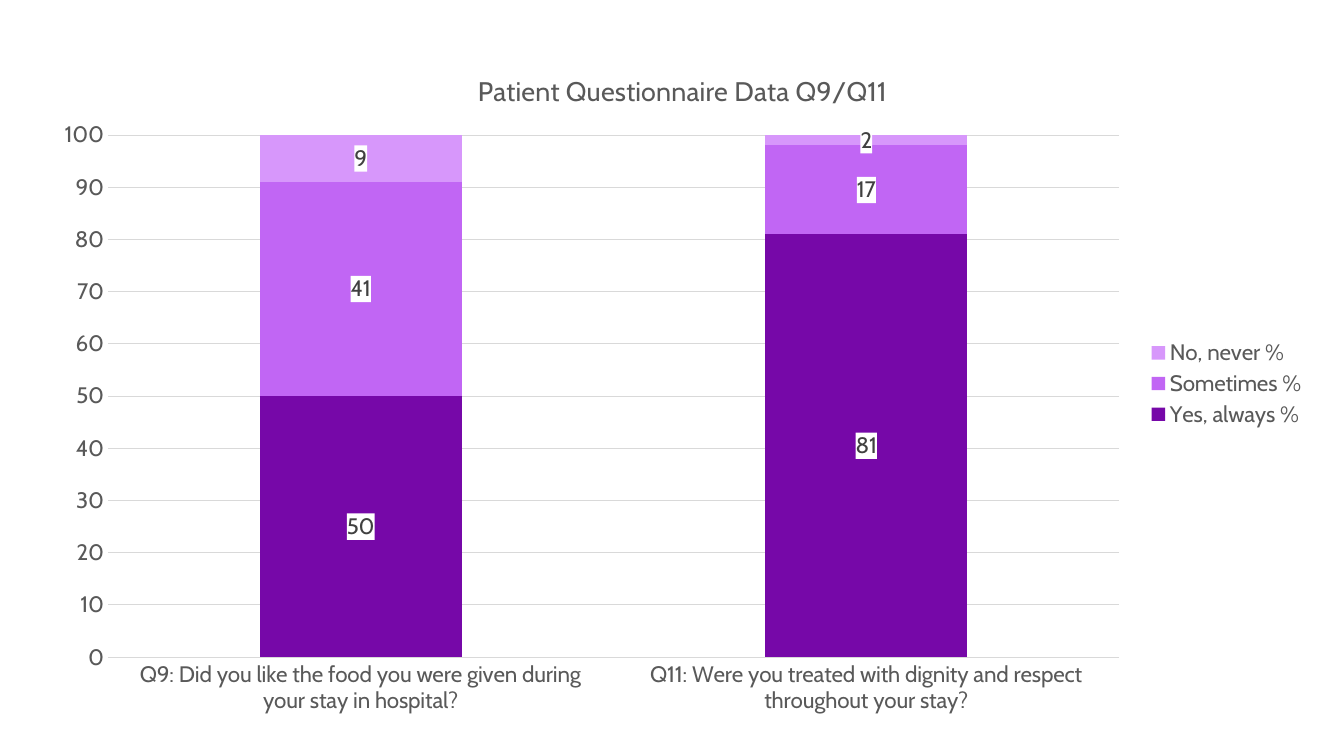
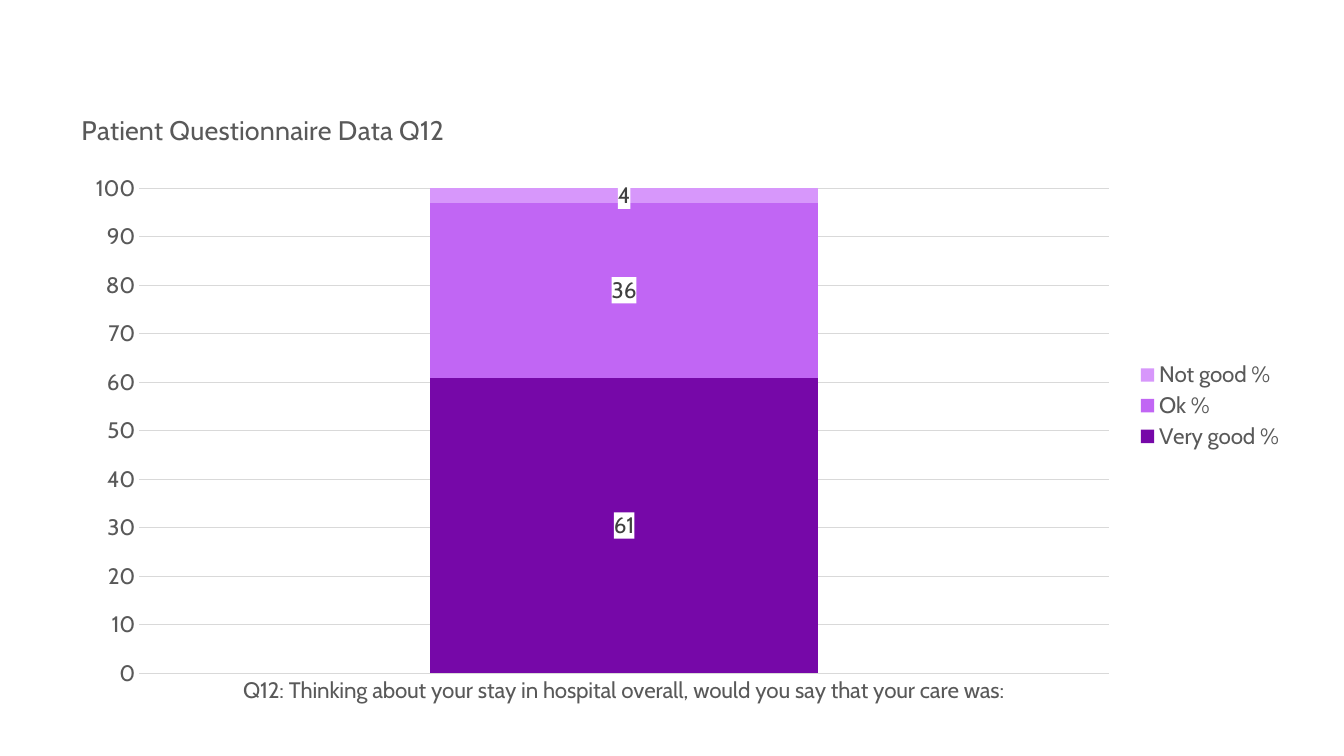
from lxml import etree
from pptx import Presentation
from pptx.chart.data import CategoryChartData
from pptx.dml.color import RGBColor
from pptx.enum.chart import (XL_CHART_TYPE, XL_LABEL_POSITION,
                             XL_LEGEND_POSITION, XL_TICK_MARK)
from pptx.oxml import parse_xml
from pptx.oxml.ns import nsdecls, qn
from pptx.util import Inches, Pt

STACKED = XL_CHART_TYPE.COLUMN_STACKED
CENTER = XL_LABEL_POSITION.CENTER
RIGHT = XL_LEGEND_POSITION.RIGHT
NO_TICK = XL_TICK_MARK.NONE

FONT = "Cabin"
COLORS = {
    "text": "595959", "label": "404040", "grid": "D9D9D9", "white": "FFFFFF",
    "best": "7608A8", "middle": "C166F4", "worst": "D797FB",
}
ANSWER_COLORS = ("best", "middle", "worst")


def rgb(name):
    return RGBColor.from_string(COLORS[name])


def style_font(font, size=16, color="text"):
    font.name, font.size, font.bold = FONT, Pt(size), False
    font.color.rgb = rgb(color)


def write(frame, text, **style):
    """Put one formatted line of text into a text frame."""
    run = frame.paragraphs[0].add_run()
    run.text = text
    style_font(run.font, **style)


def place(element, index, **fractions):
    """Give a chart part a fixed place, in fractions of the chart."""
    layout = etree.Element(qn("c:layout"))
    manual = etree.SubElement(layout, qn("c:manualLayout"))
    if "w" in fractions:
        etree.SubElement(manual, qn("c:layoutTarget"), val="inner")
    for axis in "xy":
        etree.SubElement(manual, qn(f"c:{axis}Mode"), val="edge")
    for key, value in fractions.items():
        etree.SubElement(manual, qn(f"c:{key}"), val=f"{value:.4f}")
    present = element.find(qn("c:layout"))
    if present is not None:
        element.remove(present)
    element.insert(index, layout)


class Deck:
    """Holds the shared style and the current slide."""

    def __init__(self):
        self.prs = Presentation()
        self.prs.slide_width, self.prs.slide_height = Inches(13.33), Inches(7.5)
        self.slide = None

    def new_slide(self):
        self.slide = self.prs.slides.add_slide(self.prs.slide_layouts[6])

    def survey_chart(self, title, questions, answers, box, title_at, plot_box):
        """Draw a stacked column chart; all places are slide inches."""
        data = CategoryChartData(number_format="0")
        data.categories = questions
        for answer, shares in answers.items():
            data.add_series(answer, shares)
        chart = self.slide.shapes.add_chart(
            STACKED, *map(Inches, box), data).chart
        style_font(chart.font)

        self.title(chart, title, box, title_at)
        self.axes(chart)
        self.columns(chart)
        self.legend(chart)

        left, top, width, height = box
        x, y, w, h = plot_box
        place(chart.plots[0]._element.getparent(), 0, x=(x - left) / width,
              y=(y - top) / height, w=w / width, h=h / height)

    def title(self, chart, text, box, at):
        chart.has_title = True
        write(chart.chart_title.text_frame, text, size=19.2)
        left, top, width, height = box
        place(chart.chart_title._element, 1,
              x=(at[0] - left) / width, y=(at[1] - top) / height)

    def axes(self, chart):
        shares, questions = chart.value_axis, chart.category_axis
        for axis in (shares, questions):
            axis.major_tick_mark = axis.minor_tick_mark = NO_TICK
            style_font(axis.tick_labels.font)
        shares.minimum_scale, shares.maximum_scale = 0, 100
        shares.major_unit = 10
        shares.tick_labels.number_format = "0"
        shares.tick_labels.number_format_is_linked = False
        shares.format.line.fill.background()
        shares.has_major_gridlines = True
        for line in (shares.major_gridlines.format.line, questions.format.line):
            line.color.rgb = rgb("grid")
            line.width = Pt(0.75)

    def columns(self, chart):
        plot = chart.plots[0]
        plot.gap_width, plot.overlap = 150, 100
        plot.vary_by_categories = False
        for series, color in zip(plot.series, ANSWER_COLORS):
            series.format.fill.solid()
            series.format.fill.fore_color.rgb = rgb(color)
            self.value_labels(series.data_labels)

    def value_labels(self, labels):
        labels.show_value = True
        labels.position = CENTER
        labels.number_format = "#,##0"
        labels.number_format_is_linked = False
        style_font(labels.font, color="label")
        # White box behind each value
        white_box = parse_xml(
            f'<c:spPr {nsdecls("c", "a")}><a:solidFill>'
            f'<a:srgbClr val="{COLORS["white"]}"/></a:solidFill></c:spPr>')
        labels._element.find(qn("c:txPr")).addprevious(white_box)

    def legend(self, chart):
        chart.has_legend = True
        chart.legend.position = RIGHT
        chart.legend.include_in_layout = False
        style_font(chart.legend.font)


def main():
    deck = Deck()

    # Food and dignity
    deck.new_slide()
    deck.survey_chart(
        "Patient Questionnaire Data Q9/Q11",
        ["Q9: Did you like the food you were given during your stay in hospital?",
         "Q11: Were you treated with dignity and respect throughout your stay?"],
        {"Yes, always %": (50, 81), "Sometimes %": (41, 17),
         "No, never %": (9, 2)},
        box=(0.39, 0.39, 12.67, 6.83), title_at=(4.69, 0.67),
        plot_box=(1.07, 1.34, 10.03, 5.18))

    # Overall care
    deck.new_slide()
    deck.survey_chart(
        "Patient Questionnaire Data Q12",
        ["Q12: Thinking about your stay in hospital overall, "
         "would you say that your care was:"],
        {"Very good %": (61,), "Ok %": (36,), "Not good %": (4,)},
        box=(0.71, 0.95, 12.13, 6.15), title_at=(0.76, 1.05),
        plot_box=(1.38, 1.87, 9.62, 4.81))

    deck.prs.save("out.pptx")


if __name__ == "__main__":
    main()
